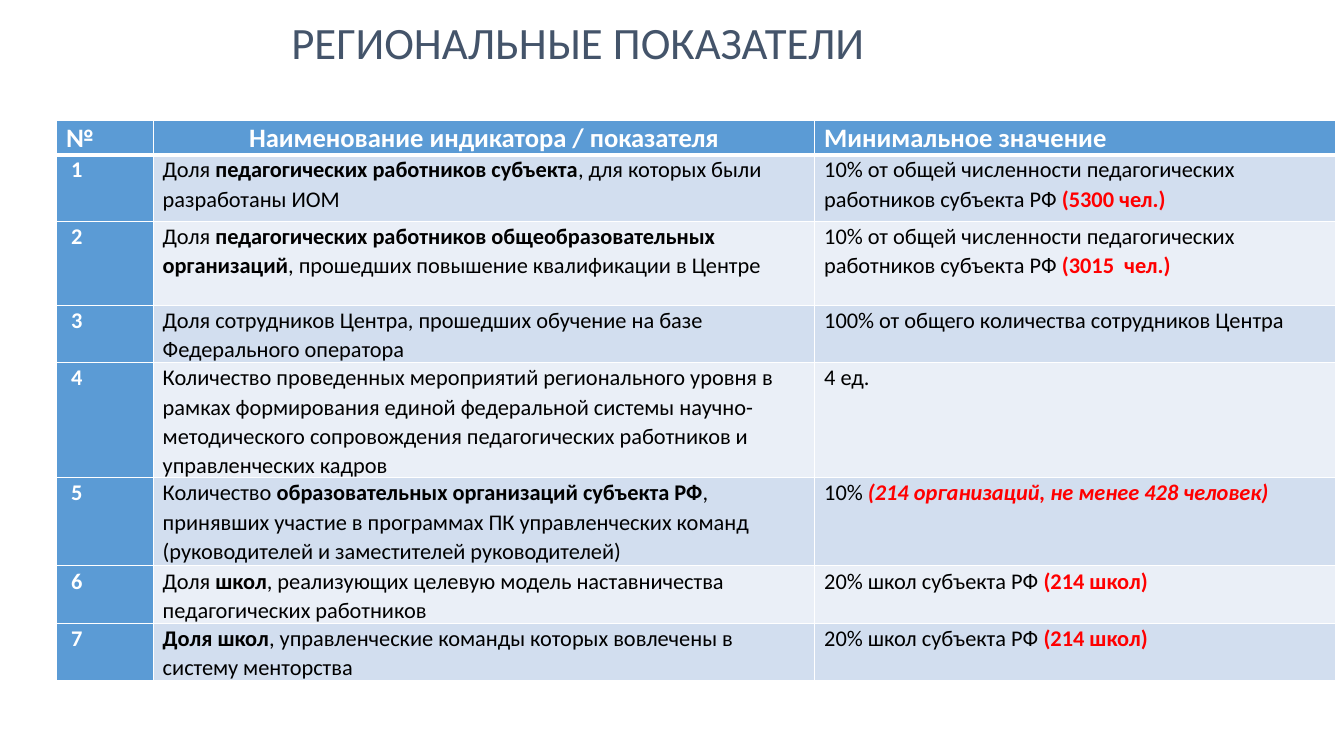
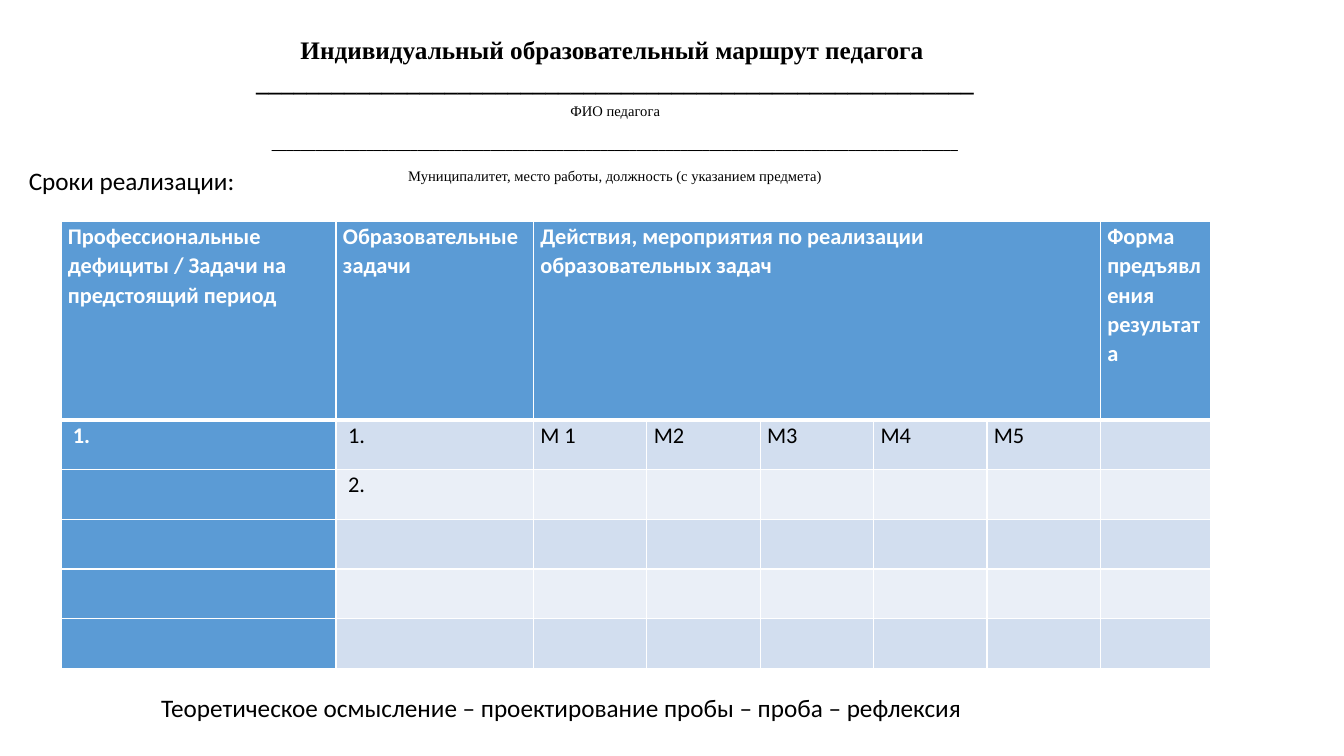
import pptx
import pptx.util
import pptx.dml.color
import pptx.enum.text
import pptx.oxml
import pptx.oxml.ns

Pt = pptx.util.Pt
ALIGN = pptx.enum.text.PP_ALIGN

COLORS = {
    "white": "FFFFFF",
    "text": "000000",
    "title": "44546A",
    "accent": "FF0000",
    "header": "5B9BD5",
    "band_dark": "D2DEEF",
    "band_light": "EAEFF7",
}
SANS, SERIF = "Calibri", "Times New Roman"
LINE_SPACING = 1.07

BOLD = {"bold": True}
RED = {"bold": True, "color": "accent"}
RED_ITALIC = {"bold": True, "italic": True, "color": "accent"}
HEADING = {"bold": True, "color": "white"}
RAISED = {"raised": True}
RAISED_BOLD = {"raised": True, "bold": True}

REGION_TITLE = "РЕГИОНАЛЬНЫЕ ПОКАЗАТЕЛИ"
INDICATOR_HEADS = ["№", "Наименование индикатора / показателя", "Минимальное значение"]
INDICATORS = [
    ([("Доля ",), ("педагогических работников субъекта", BOLD),
      (", для которых были разработаны ИОМ",)],
     [("10% от общей численности педагогических работников субъекта РФ ",),
      ("(5300 чел.)", RED)]),
    ([("Доля ",), ("педагогических работников общеобразовательных организаций", BOLD),
      (", прошедших повышение квалификации в Центре",)],
     [("10% от общей численности педагогических работников субъекта РФ ",),
      ("(3015  чел.)", RED)]),
    ([("Доля сотрудников Центра, прошедших обучение на базе Федерального оператора",)],
     [("100% от общего количества сотрудников Центра",)]),
    ([("Количество проведенных мероприятий регионального уровня в рамках формирования "
       "единой федеральной системы научно-методического сопровождения педагогических "
       "работников и управленческих кадров",)],
     [("4 ед.",)]),
    ([("Количество ",), ("образовательных организаций субъекта РФ", BOLD),
      (", принявших участие в программах ПК управленческих команд "
       "(руководителей и заместителей руководителей)",)],
     [("10% ",), ("(214 организаций, не менее 428 человек)", RED_ITALIC)]),
    ([("Доля ",), ("школ", BOLD),
      (", реализующих целевую модель наставничества педагогических работников",)],
     [("20% школ субъекта РФ ",), ("(214 школ)", RED)]),
    ([("Доля школ", BOLD), (", управленческие команды которых вовлечены в систему менторства",)],
     [("20% школ субъекта РФ ",), ("(214 школ)", RED)]),
]
INDICATOR_COLUMNS = [69, 472.5, 372]
INDICATOR_ROWS = [24.5, 47.5, 60, 41, 82, 63, 41, 41]

ROUTE_HEADING = [
    [("Индивидуальный образовательный маршрут педагога ", BOLD)],
    [("_" * 57, BOLD)],
    [("ФИО педагога", RAISED)],
    [("_" * 94, RAISED_BOLD)],
    [("Муниципалитет, место работы, должность (с указанием предмета)", RAISED)],
]
ROUTE_TERM = "Сроки реализации:"
ROUTE_SUMMARY = "Теоретическое осмысление – проектирование пробы – проба – рефлексия"
ROUTE_HEADS = ["Профессиональные дефициты / Задачи на предстоящий период",
               "Образовательные задачи",
               "Действия, мероприятия по реализации образовательных задач",
               "", "", "", "",
               "Форма предъявления результата"]
ROUTE_ENTRIES = [
    [" 1.", " 1.", "М 1", "М2", "М3", "М4", "М5", ""],
    ["", " 2."] + [""] * 6,
    [""] * 8,
    [""] * 8,
    [""] * 8,
]
ROUTE_COLUMNS = [196.5, 141] + [81] * 5 + [79]
ROUTE_ROWS = [142] + [35.5] * 5


def rgb(name):
    return pptx.dml.color.RGBColor.from_string(COLORS[name])


def write(paragraph, runs, size, font=SANS, color="text", align=None, spacing=None):
    paragraph.alignment = align
    paragraph.line_spacing = spacing
    for text, *style in runs:
        look = style[0] if style else {}
        run = paragraph.add_run()
        run.text = text
        run.font.name = font
        run.font.size = Pt(size)
        run.font.bold = look.get("bold", False)
        run.font.italic = look.get("italic", False)
        run.font.color.rgb = rgb(look.get("color", color))
        if look.get("raised"):
            run._r.get_or_add_rPr().set("baseline", "30000")


def add_text(slide, box, lines, size, **style):
    frame = slide.shapes.add_textbox(*map(Pt, box)).text_frame
    frame.word_wrap = True
    frame.auto_size = pptx.enum.text.MSO_AUTO_SIZE.SHAPE_TO_FIT_TEXT
    for index, runs in enumerate(lines):
        paragraph = frame.add_paragraph() if index else frame.paragraphs[0]
        write(paragraph, runs, size, **style)


def set_borders(cell, widths):
    properties = cell._tc.get_or_add_tcPr()
    for index, (side, width) in enumerate(zip("LRTB", widths)):
        properties.insert(index, pptx.oxml.parse_xml(
            f'<a:ln{side} {pptx.oxml.ns.nsdecls("a")} w="{Pt(width)}"><a:solidFill>'
            f'<a:srgbClr val="{COLORS["white"]}"/></a:solidFill></a:ln{side}>'))


def add_grid(slide, left, top, columns, heights, rows, inset, head_size, centred=()):
    table = slide.shapes.add_table(len(rows), len(columns), Pt(left), Pt(top),
                                   Pt(sum(columns)), Pt(sum(heights))).table
    for column, width in zip(table.columns, columns):
        column.width = Pt(width)
    for r, (row, height, entries) in enumerate(zip(table.rows, heights, rows)):
        row.height = Pt(height)
        for c, (cell, runs) in enumerate(zip(row.cells, entries)):
            cell.margin_left = cell.margin_right = Pt(inset)
            cell.margin_top = cell.margin_bottom = 0
            heading = r == 0 or c == 0
            fill = "header" if heading else "band_dark" if r % 2 else "band_light"
            cell.fill.solid()
            cell.fill.fore_color.rgb = rgb(fill)
            set_borders(cell, [1, 1, 3 if r == 1 else 1, 3 if r == 0 else 1])
            if isinstance(runs, str):
                runs = [(runs, HEADING if heading else {})] if runs else []
            write(cell.text_frame.paragraphs[0], runs, 16 if r else head_size,
                  align=ALIGN.CENTER if (r, c) in centred else None, spacing=LINE_SPACING)
    return table


def build_indicators(slide):
    add_text(slide, (201, 7, 752, 46), [[(REGION_TITLE,)]], 32, color="title")
    rows = [INDICATOR_HEADS]
    rows += [[f" {number}", name, value]
             for number, (name, value) in enumerate(INDICATORS, 1)]
    add_grid(slide, 40.5, 86, INDICATOR_COLUMNS, INDICATOR_ROWS, rows, 6.75, 19,
             centred={(0, 1)})


def build_route(slide):
    add_text(slide, (59, 19.5, 761, 124), ROUTE_HEADING, 18, font=SERIF,
             align=ALIGN.CENTER, spacing=LINE_SPACING)
    add_text(slide, (13.5, 114.5, 171, 29), [[(ROUTE_TERM,)]], 18)
    grid = add_grid(slide, 43.5, 158, ROUTE_COLUMNS, ROUTE_ROWS,
                    [ROUTE_HEADS] + ROUTE_ENTRIES, 5, 16)
    grid.cell(0, 2).merge(grid.cell(0, 6))
    add_text(slide, (108, 491, 724, 51), [[(ROUTE_SUMMARY,)]], 18)


def main():
    deck = pptx.Presentation()
    deck.slide_width, deck.slide_height = Pt(960), Pt(540)
    for build in (build_indicators, build_route):
        build(deck.slides.add_slide(deck.slide_layouts[6]))
    deck.save("out.pptx")


if __name__ == "__main__":
    main()
